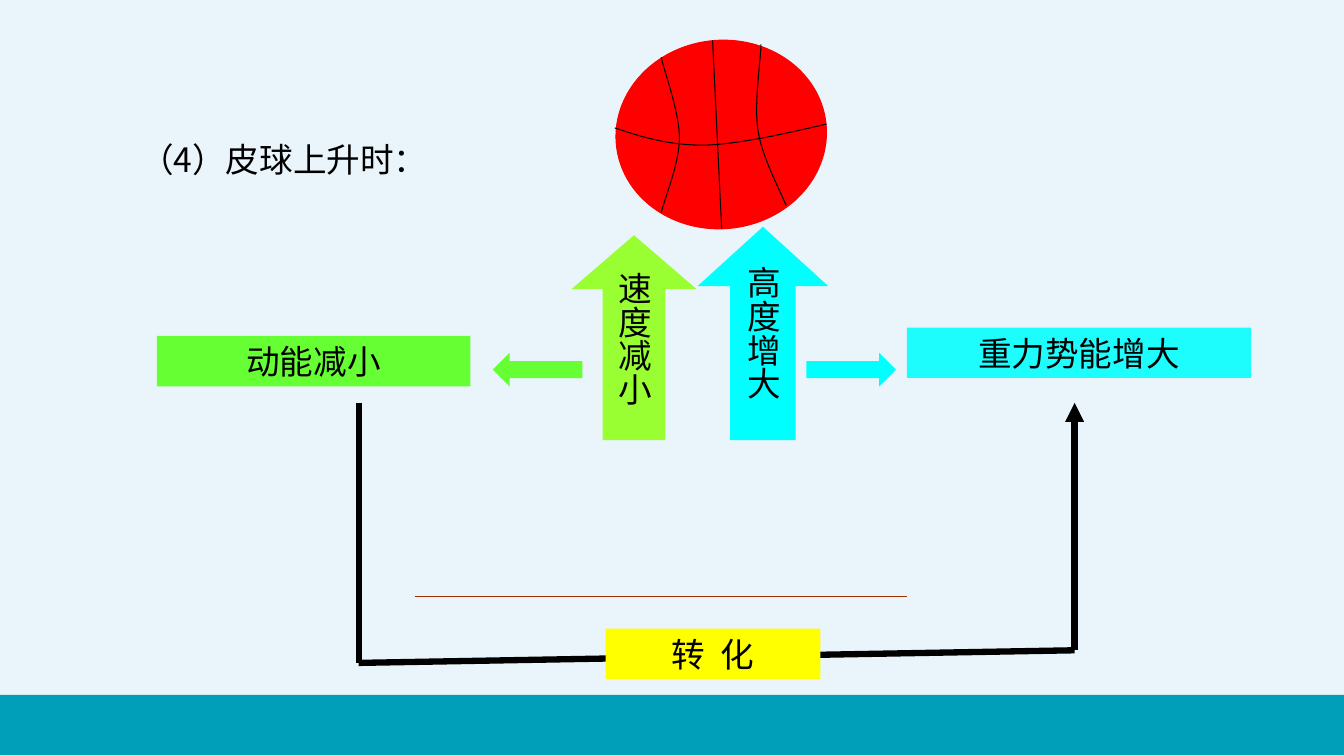
import dataclasses

import pptx
import pptx.dml.color
import pptx.enum.dml
import pptx.enum.shapes
import pptx.enum.text
import pptx.oxml
import pptx.oxml.ns
import pptx.util

Pt = pptx.util.Pt
Kind = pptx.enum.shapes.MSO_SHAPE
Align = pptx.enum.text.PP_ALIGN
Mid = pptx.enum.text.MSO_ANCHOR.MIDDLE
Top = pptx.enum.text.MSO_ANCHOR.TOP
qn = pptx.oxml.ns.qn


@dataclasses.dataclass(frozen=True)
class Theme:
    back: str = "EAF5FB"
    band: str = "009FB9"
    ink: str = "000000"
    ball: str = "FF0000"
    aqua: str = "00FFFF"
    lime: str = "99FF33"
    green: str = "66FF33"
    gold: str = "FFFF00"
    rust: str = "993300"
    font: str = "Noto Sans CJK SC"
    size: float = 24
    thin: float = 0.75
    thick: float = 4.5


theme = Theme()


# Helpers
def rgb(code):
    return pptx.dml.color.RGBColor.from_string(code)


def put(item, vals):
    for name, val in vals.items():
        setattr(item, name, val)


def stroke(line, color, width):
    line.width = Pt(width)
    line.fill.solid()
    line.fill.fore_color.rgb = rgb(color)


def write(shape, text, align=Align.CENTER, anchor=Top, wrap=True, gap=0):
    frame = shape.text_frame
    put(frame, {"word_wrap": wrap, "vertical_anchor": anchor})
    para = frame.paragraphs[0]
    para.alignment = align
    run = para.add_run()
    run.text = text
    put(run.font, {"size": Pt(theme.size), "name": theme.font})
    run.font.color.rgb = rgb(theme.ink)
    props = run.font._element
    pptx.oxml.ns  # East Asian face follows the Latin one
    face = props.makeelement(qn("a:ea"), {"typeface": theme.font})
    props.find(qn("a:latin")).addnext(face)
    if gap:
        props.set("spc", str(round(gap * 100)))


def block(slide, kind, box, color, alpha=100):
    shape = slide.shapes.add_shape(kind, *map(Pt, box))
    shape.shadow.inherit = False
    shape.fill.solid()
    shape.fill.fore_color.rgb = rgb(color)
    shape.line.fill.background()
    if alpha < 100:
        tint = shape.fill._xPr.find(qn("a:solidFill"))[0]
        tint.append(tint.makeelement(qn("a:alpha"), {"val": str(alpha * 1000)}))
    return shape


def rule(slide, start, end, color, width, head=False):
    line = slide.shapes.add_connector(
        pptx.enum.shapes.MSO_CONNECTOR.STRAIGHT, *map(Pt, start + end))
    stroke(line.line, color, width)
    props = line._element.spPr
    if head:
        outline = props.find(qn("a:ln"))
        outline.append(outline.makeelement(qn("a:tailEnd"), {"type": "triangle"}))
    props.append(props.makeelement(qn("a:effectLst"), {}))


def bend(knots, steps=12):
    """Points along a chain of cubic curves."""
    dots = [knots[0]]
    for at in range(0, len(knots) - 1, 3):
        for step in range(1, steps + 1):
            t = step / steps
            u = 1 - t
            parts = (u ** 3, 3 * u * u * t, 3 * u * t * t, t ** 3)
            dots.append(tuple(sum(w * knot[axis] for w, knot
                                  in zip(parts, knots[at:at + 4]))
                              for axis in (0, 1)))
    return dots


# Background and bottom band
def base(slide, box):
    fill = slide.background.fill
    fill.solid()
    fill.fore_color.rgb = rgb(theme.back)
    block(slide, Kind.RECTANGLE, box, theme.band)


# Heading
def title(slide, box):
    shape = slide.shapes.add_textbox(*map(Pt, box))
    write(shape, "（4）皮球上升时：", Align.LEFT)


# Ball with its seams
def ball(slide, box):
    x, y, w, h = box
    disc = block(slide, Kind.OVAL, box, theme.ball)
    disc.rotation = -5.6
    stroke(disc.line, theme.ball, theme.thin)
    seams = (
        ((32.4, 12.2), (34.6, 22.3), (45.4, 51.1), (45.4, 69.8),
         (45.4, 87.8), (35.3, 111.6), (32.4, 123.1)),
        ((103.7, 2.9), (103.7, 13), (98.6, 44.6), (101.5, 64.1),
         (104.4, 83.5), (117.4, 107.3), (121.7, 118.1)),
        ((-0.7, 62.6), (18.7, 69.1), (37.4, 74.9), (62.6, 74.9),
         (87.8, 74.2), (119.5, 67), (w, 59.8)),
    )
    for seam in seams:
        dots = [(Pt(x + dx), Pt(y + dy)) for dx, dy in bend(seam)]
        path = slide.shapes.build_freeform(*dots[0])
        path.add_line_segments(dots[1:], close=False)
        shape = path.convert_to_shape()
        shape.shadow.inherit = False
        shape.fill.background()
        stroke(shape.line, theme.ink, theme.thin)
    rule(slide, (x + 69.1, y), (x + 75.6, y + h), theme.ink, theme.thin)


# Upright arrows with vertical text
def rise(slide, box):
    x, y, w, h = box
    for text, color, dx, dy, wide, tip in (
            ("高度增大", theme.aqua, 90, 0, 93.6, 0.454),
            ("速度减小", theme.lime, 0, 6, 89.4, 0.431)):
        shape = block(slide, Kind.UP_ARROW, (x + dx, y + dy, wide, h - dy), color)
        shape.adjustments[1] = tip
        write(shape, text, anchor=Mid, wrap=False)
        shape.text_frame._txBody.bodyPr.set("vert", "eaVert")


# Energy labels and the arrows that lead to them
def energy(slide, box):
    x, y, w, h = box
    for text, color, dx, dy, wide, alpha in (
            ("重力势能增大", theme.aqua, 535.7, 0, 245.8, 87),
            ("动能减小", theme.green, 0, 6, 224, 100)):
        shape = block(slide, Kind.RECTANGLE, (x + dx, y + dy, wide, 36), color, alpha)
        write(shape, text)
    for dx, color, turn in ((464, theme.aqua, 180), (240, theme.green, 0)):
        shape = block(slide, Kind.LEFT_ARROW, (x + dx, y + 18, 64, 24), color)
        shape.rotation = turn
    

# Conversion path from one energy to the other
def change(slide, box):
    x, y, w, h = box
    right, low = x + w, y + h
    rule(slide, (x + 40, low - 47.5), (x + 392, low - 47.5), theme.rust, theme.thin)
    for start, end, head in (
            ((x, y), (x, low), False),
            ((x, low), (right, low - 9), False),
            ((right, low - 9), (right, y), True)):
        rule(slide, start, end, theme.ink, theme.thick, head)
    label = block(slide, Kind.RECTANGLE, (x + 176.4, low - 24.4, 153.4, 36), theme.gold)
    write(label, "转 化", gap=2.7)


def main():
    deck = pptx.Presentation()
    put(deck, {"slide_width": Pt(960), "slide_height": Pt(540)})
    slide = deck.slides.add_slide(deck.slide_layouts[6])
    base(slide, (0, 496.3, 960, 43.2))
    ball(slide, (439.9, 28.8, 150.5, 134.6))
    title(slide, (93, 96, 369, 36))
    rise(slide, (408.2, 162, 183.6, 152.4))
    energy(slide, (112, 234, 781.5, 42))
    change(slide, (256.2, 287.8, 511.4, 185.7))
    deck.save("out.pptx")


if __name__ == "__main__":
    main()
